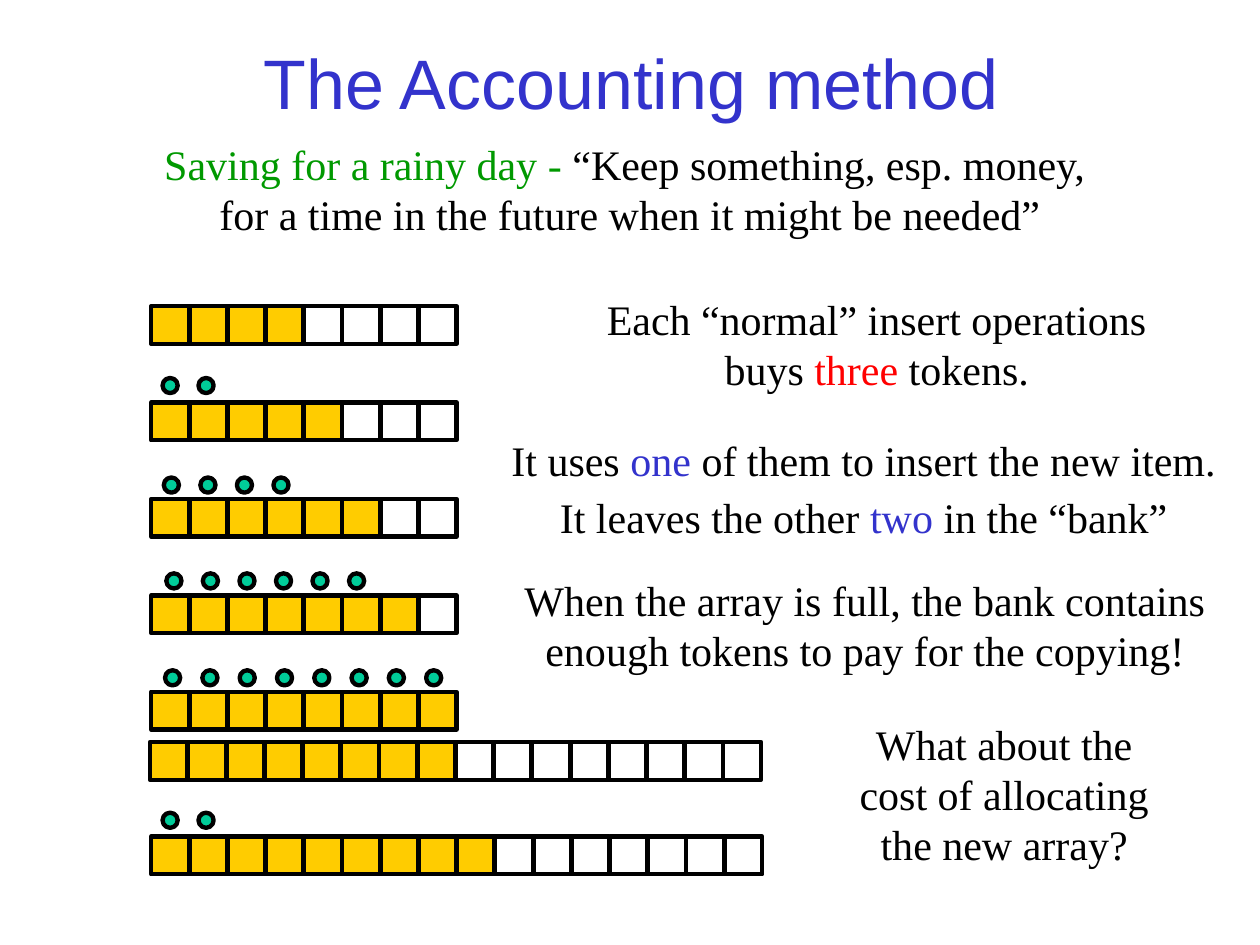
import pptx
import pptx.util
import pptx.dml.color
import pptx.enum.shapes
import pptx.enum.text

WIDE = pptx.util.Inches(10)
HIGH = pptx.util.Inches(7.5)
KIND = pptx.enum.shapes.MSO_SHAPE
HUES = {
    "blue": "3333CC",
    "green": "009900",
    "black": "000000",
    "red": "FF0000",
    "gold": "FFCC00",
    "teal": "00CC99",
}
STEP = 91 / 30
CELL = 3
COIN = 1.2


def hue(name):
    return pptx.dml.color.RGBColor.from_string(HUES[name])


def across(share):
    return round(WIDE * share / 100)


def down(share):
    return round(HIGH * share / 100)


def add_text(slide, place, runs, size=24, face="Times New Roman", mid=False):
    left, top, width, height = place
    box = slide.shapes.add_textbox(
        across(left), down(top), across(width), down(height))
    frame = box.text_frame
    frame.word_wrap = True
    if mid:
        frame.vertical_anchor = pptx.enum.text.MSO_ANCHOR.MIDDLE
    para = frame.paragraphs[0]
    para.alignment = pptx.enum.text.PP_ALIGN.CENTER
    para.font.size = pptx.util.Pt(size)
    para.font.name = face
    for words, name in runs:
        for part, line in enumerate(words.split("\n")):
            if part:
                para.add_line_break()
            run = para.add_run()
            run.text = line
            run.font.color.rgb = hue(name)


def add_mark(group, kind, left, top, size, fill):
    side = across(size)
    mark = group.shapes.add_shape(kind, across(left), down(top), side, side)
    mark.shadow.inherit = False
    mark.line.color.rgb = hue("black")
    mark.line.width = pptx.util.Pt(2.5)
    if fill:
        mark.fill.solid()
        mark.fill.fore_color.rgb = hue(fill)
    else:
        mark.fill.background()


def add_array(slide, left, top, used, total):
    group = slide.shapes.add_group_shape()
    for col in range(total):
        fill = "gold" if col < used else None
        add_mark(group, KIND.RECTANGLE, left + col * STEP, top, CELL, fill)


def add_bank(slide, left, top, count, step):
    group = slide.shapes.add_group_shape()
    for col in range(count):
        add_mark(group, KIND.OVAL, left + col * step, top, COIN, "teal")


def main():
    deck = pptx.Presentation()
    deck.slide_width, deck.slide_height = WIDE, HIGH
    slide = deck.slides.add_slide(deck.slide_layouts[6])

    add_text(slide, (0.1, 2.8, 100, 11.6),
             [("The Accounting method", "blue")], 40, "Arial", True)
    add_text(slide, (0, 14, 100, 12.13), [
        ("Saving for a rainy day - ", "green"),
        ("“Keep something, esp. money, \n"
         "for a time in the future when it might be needed”", "black")])

    for row in range(5):
        add_array(slide, 12, 32.4 + row * 10.2, 4 + row, 8)
    add_array(slide, 11.9, 78.53, 8, 16)
    add_array(slide, 12, 88.53, 9, 16)

    banks = [
        (12.9, 40, 2, 2.85),
        (13, 50.53, 4, 2.9),
        (13.2, 60.67, 6, 2.9),
        (13.1, 70.93, 8, 2.96),
        (12.9, 86, 2, 2.85),
    ]
    for bank in banks:
        add_bank(slide, *bank)

    notes = [
        ((42.1, 30.4, 55.8, 12.13),
         [("Each “normal” insert operations \nbuys ", "black"),
          ("three", "red"), (" tokens. ", "black")]),
        ((39.2, 45.33, 58.7, 6.67),
         [("It uses ", "black"), ("one", "blue"),
          (" of them to insert the new item.", "black")]),
        ((39.2, 51.33, 58.7, 6.67),
         [("It leaves the other ", "black"), ("two", "blue"),
          (" in the “bank”", "black")]),
        ((39.3, 60.13, 58.7, 12.13),
         [("When the array is full, the bank contains "
           "enough tokens to pay for the copying!", "black")]),
        ((65.7, 75.33, 28, 17.47),
         [("What about the cost of allocating the new array?", "black")]),
    ]
    for place, runs in notes:
        add_text(slide, place, runs)

    deck.save("out.pptx")


if __name__ == "__main__":
    main()
